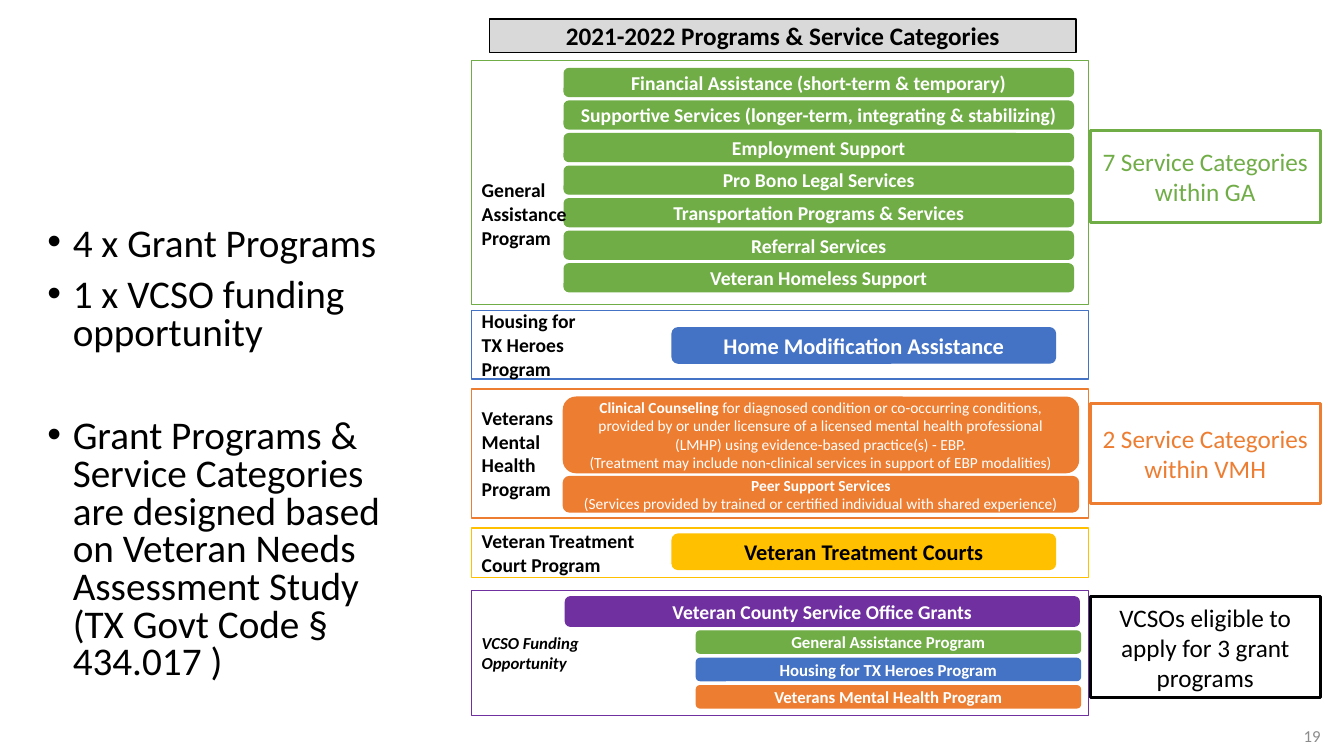
import pptx
import pptx.util
import pptx.dml.color
import pptx.enum.shapes
import pptx.enum.text
from lxml import etree

Cm, Pt = pptx.util.Cm, pptx.util.Pt
RGBColor = pptx.dml.color.RGBColor
PP_ALIGN = pptx.enum.text.PP_ALIGN
MSO_SHAPE = pptx.enum.shapes.MSO_SHAPE

BLACK = RGBColor(0x00, 0x00, 0x00)
WHITE = RGBColor(0xFF, 0xFF, 0xFF)
GRAY = RGBColor(0x8C, 0x8C, 0x8C)
LIGHT_GRAY = RGBColor(0xD9, 0xD9, 0xD9)
GREEN = RGBColor(0x70, 0xAD, 0x47)
BLUE = RGBColor(0x44, 0x72, 0xC4)
ORANGE = RGBColor(0xED, 0x7D, 0x31)
GOLD = RGBColor(0xFF, 0xC0, 0x00)
PURPLE = RGBColor(0x70, 0x30, 0xA0)

FONT = "Calibri"
TITLE = "2021-2022 Programs & Service Categories"
PAGE_NUMBER = "19"

# Text and space before in points
BULLETS = [
    ("4 x Grant Programs", 0),
    ("1 x VCSO funding opportunity", 10),
    ("Grant Programs & Service Categories are designed based on "
     "Veteran Needs Assessment Study (TX Govt Code § 434.017 )", 47),
]

GENERAL_SERVICES = [
    "Financial Assistance (short-term & temporary)",
    "Supportive Services (longer-term, integrating & stabilizing)",
    "Employment Support",
    "Pro Bono Legal Services",
    "Transportation Programs & Services",
    "Referral Services",
    "Veteran Homeless Support",
]
VCSO_PROGRAMS = [
    ("General Assistance Program", GREEN),
    ("Housing for TX Heroes Program", BLUE),
    ("Veterans Mental Health Program", ORANGE),
]
# Each line is a list of (text, bold) runs
COUNSELING = [
    [("Clinical Counseling ", True),
     ("for diagnosed condition or co-occurring conditions, provided by or under "
      "licensure of a licensed mental health professional (LMHP) using "
      "evidence-based practice(s) - EBP.", False)],
    [("(Treatment may include non-clinical services in support of EBP modalities)", False)],
]
PEER_SUPPORT = [
    [("Peer Support Services", True)],
    [("(Services provided by trained or certified individual with shared experience)", False)],
]

# Lines, box in cm, fill, text colour, size
PILLS = [
    ([[("Home Modification Assistance", True)]], (16.94, 8.26, 9.66, 0.89), BLUE, WHITE, 16),
    (COUNSELING, (14.2, 10.01, 12.98, 1.9), ORANGE, WHITE, 11),
    (PEER_SUPPORT, (14.2, 12.01, 12.98, 0.89), ORANGE, WHITE, 11),
    ([[("Veteran Treatment Courts", True)]], (16.94, 13.46, 9.66, 0.89), GOLD, BLACK, 16),
    ([[("Veteran County Service Office Grants", True)]], (14.25, 15.04, 12.95, 0.74),
     PURPLE, WHITE, 14),
]
PILLS += [([[(name, True)]], (14.22, 1.73 + 0.82 * row, 12.83, 0.7), GREEN, WHITE, 14)
          for row, name in enumerate(GENERAL_SERVICES)]
PILLS += [([[(name, True)]], (17.55, 15.9 + 0.69 * row, 9.68, 0.56), color, WHITE, 12)
          for row, (name, color) in enumerate(VCSO_PROGRAMS)]

# Lines, top, height, colour, size, italic, top inset
PANEL_LEFT, PANEL_WIDTH = 11.89, 15.54
PANELS = [
    (["General", "Assistance", "Program"], 1.52, 6.15, GREEN, 14, False, 1.58),
    (["Housing for", "TX Heroes", "Program"], 7.82, 1.73, BLUE, 14, False, 0),
    (["Veterans", "Mental", "Health", "Program"], 9.8, 3.25, ORANGE, 14, False, 0),
    (["Veteran Treatment", "Court Program"], 13.31, 1.24, GOLD, 14, False, 0),
    (["VCSO Funding", "Opportunity"], 14.88, 3.15, PURPLE, 12, True, 0),
]

# Lines, top, height, colour
CALLOUT_LEFT, CALLOUT_WIDTH = 27.48, 5.79
CALLOUTS = [
    (["7 Service Categories", "within GA"], 3.3, 2.31, GREEN),
    (["2 Service Categories", "within VMH"], 10.16, 2.54, ORANGE),
    (["VCSOs eligible to apply for 3 grant programs"], 15.04, 2.54, BLACK),
]


def place(shape, box):
    shape.left, shape.top, shape.width, shape.height = (Cm(value) for value in box)


def paint(shape, fill, line, line_width):
    if fill is None:
        shape.fill.background()
    else:
        shape.fill.solid()
        shape.fill.fore_color.rgb = fill
    shape.line.color.rgb = line
    shape.line.width = Pt(line_width)


def write(shape, lines, size, color, align, bold=None, italic=None, top_inset=0):
    """Write one paragraph per line; a line is a string or a list of (text, bold) runs."""
    frame = shape.text_frame
    frame.word_wrap = True
    frame.auto_size = pptx.enum.text.MSO_AUTO_SIZE.NONE
    frame.vertical_anchor = pptx.enum.text.MSO_ANCHOR.MIDDLE
    frame.margin_top, frame.margin_bottom = Cm(top_inset), 0
    for index, line in enumerate(lines):
        paragraph = frame.add_paragraph() if index else frame.paragraphs[0]
        paragraph.alignment = align
        font = paragraph.font
        font.name, font.size, font.bold, font.italic = FONT, Pt(size), bold, italic
        font.color.rgb = color
        if isinstance(line, str):
            paragraph.add_run().text = line
            continue
        for text, run_bold in line:
            run = paragraph.add_run()
            run.text = text
            run.font.bold = run_bold


def add_box(slide, kind, box, fill, line, line_width):
    shape = slide.shapes.add_shape(kind, *(Cm(value) for value in box))
    shape.shadow.inherit = False
    paint(shape, fill, line, line_width)
    return shape


def fill_bullets(body):
    place(body, (0.94, 5.59, 9.55, 11.58))
    frame = body.text_frame
    frame.word_wrap = True
    frame.auto_size = pptx.enum.text.MSO_AUTO_SIZE.NONE
    for index, (text, space) in enumerate(BULLETS):
        paragraph = frame.add_paragraph() if index else frame.paragraphs[0]
        paragraph.text = text
        paragraph.line_spacing = 0.8
        paragraph.space_before = Pt(space)
        properties = paragraph._p.get_or_add_pPr()
        properties.set("marL", str(Cm(0.64)))
        properties.set("indent", str(-Cm(0.64)))
        bullet = etree.SubElement(properties, pptx.oxml.ns.qn("a:buChar"))
        bullet.set("char", "•")
        paragraph.font.name, paragraph.font.size = FONT, Pt(28)
        paragraph.font.color.rgb = BLACK


def main():
    presentation = pptx.Presentation()
    presentation.slide_width, presentation.slide_height = Cm(33.87), Cm(19.05)
    slide = presentation.slides.add_slide(presentation.slide_layouts[1])

    title = slide.shapes.title
    place(title, (12.34, 0.48, 14.78, 0.84))
    paint(title, LIGHT_GRAY, BLACK, 1)
    write(title, [TITLE], 18, BLACK, PP_ALIGN.CENTER, bold=True)
    fill_bullets(slide.placeholders[1])

    for lines, box, fill, color, size in PILLS:
        pill = add_box(slide, MSO_SHAPE.ROUNDED_RECTANGLE, box, fill, fill, 1)
        write(pill, lines, size, color, PP_ALIGN.CENTER)
    for lines, top, height, color, size, italic, inset in PANELS:
        box = (PANEL_LEFT, top, PANEL_WIDTH, height)
        panel = add_box(slide, MSO_SHAPE.RECTANGLE, box, None, color, 1)
        write(panel, lines, size, BLACK, PP_ALIGN.LEFT, True, italic, inset)
    for lines, top, height, color in CALLOUTS:
        box = (CALLOUT_LEFT, top, CALLOUT_WIDTH, height)
        callout = add_box(slide, MSO_SHAPE.RECTANGLE, box, None, color, 2.25)
        write(callout, lines, 18, color, PP_ALIGN.CENTER)

    number = slide.shapes.add_textbox(Cm(25.91), Cm(18.03), Cm(7.62), Cm(1.02))
    write(number, [PAGE_NUMBER], 12, GRAY, PP_ALIGN.RIGHT)
    presentation.save("out.pptx")


if __name__ == "__main__":
    main()
